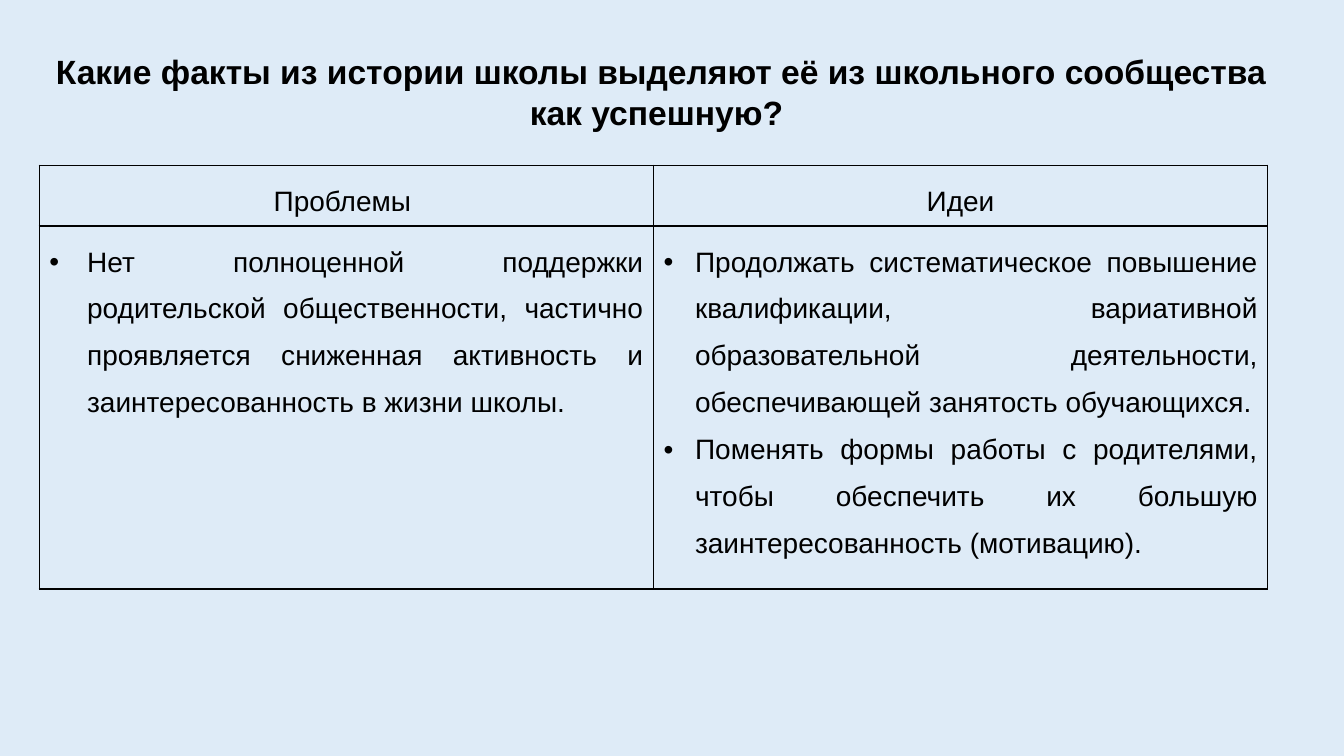
from dataclasses import dataclass

from lxml.etree import SubElement
from pptx import Presentation
from pptx.dml.color import RGBColor
from pptx.enum.text import MSO_AUTO_SIZE, PP_ALIGN
from pptx.oxml.ns import qn
from pptx.util import Pt


@dataclass(frozen=True)
class Theme:
    font: str = "Arial"
    ink: str = "000000"
    background: str = "DEEBF7"
    title_size: int = 24
    body_size: int = 20
    line_spacing: float = 1.5
    border: int = 1


THEME = Theme()

TITLE = "Какие факты из истории школы выделяют её из школьного сообщества как успешную? "
# Each column: heading, bullet indent in points, bullet points
COLUMNS = [
    ("Проблемы ", 27, [
        "Нет полноценной поддержки родительской общественности, частично "
        "проявляется сниженная активность и заинтересованность в жизни школы.",
    ]),
    ("Идеи", 22.5, [
        "Продолжать систематическое повышение квалификации, вариативной "
        "образовательной деятельности, обеспечивающей занятость обучающихся.",
        "Поменять формы работы с родителями, чтобы обеспечить их большую "
        "заинтересованность (мотивацию).",
    ]),
]
LEFT = 28
TABLE_TOP = 118
COLUMN_WIDTH = 438.75
ROW_HEIGHTS = (43.5, 259)


def add_text(paragraph, text, size, align, bold=False):
    paragraph.alignment = align
    run = paragraph.add_run()
    run.text = text
    run.font.name = THEME.font
    run.font.size = Pt(size)
    run.font.bold = bold
    run.font.color.rgb = RGBColor.from_string(THEME.ink)


def add_bullet(paragraph, indent):
    properties = paragraph._p.get_or_add_pPr()
    properties.set("marL", str(Pt(indent)))
    properties.set("indent", str(-Pt(indent)))
    SubElement(properties, qn("a:buFont"), typeface=THEME.font)
    SubElement(properties, qn("a:buChar"), char="•")


def style_cell(cell):
    properties = cell._tc.get_or_add_tcPr()
    for side in ("lnL", "lnR", "lnT", "lnB"):
        line = SubElement(properties, qn(f"a:{side}"), w=str(Pt(THEME.border)))
        fill = SubElement(line, qn("a:solidFill"))
        SubElement(fill, qn("a:srgbClr"), val=THEME.ink)
    cell.fill.background()


def fill_cell(cell, texts, align, indent=None):
    style_cell(cell)
    frame = cell.text_frame
    for index, text in enumerate(texts):
        paragraph = frame.add_paragraph() if index else frame.paragraphs[0]
        if indent is not None:
            add_bullet(paragraph, indent)
        paragraph.line_spacing = THEME.line_spacing
        add_text(paragraph, text, THEME.body_size, align)


def add_title(slide):
    frame = slide.shapes.add_textbox(Pt(LEFT), Pt(33), Pt(888.5), Pt(65.5)).text_frame
    frame.word_wrap = True
    frame.auto_size = MSO_AUTO_SIZE.SHAPE_TO_FIT_TEXT
    add_text(frame.paragraphs[0], TITLE, THEME.title_size, PP_ALIGN.CENTER, bold=True)


def add_comparison(slide):
    table = slide.shapes.add_table(
        len(ROW_HEIGHTS), len(COLUMNS), Pt(LEFT), Pt(TABLE_TOP),
        Pt(COLUMN_WIDTH * len(COLUMNS)), Pt(sum(ROW_HEIGHTS))).table
    table.first_row = table.horz_banding = False
    for row, height in zip(table.rows, ROW_HEIGHTS):
        row.height = Pt(height)
    for index, (heading, indent, points) in enumerate(COLUMNS):
        table.columns[index].width = Pt(COLUMN_WIDTH)
        fill_cell(table.cell(0, index), [heading], PP_ALIGN.CENTER)
        fill_cell(table.cell(1, index), points, PP_ALIGN.JUSTIFY, indent)


def main():
    # Slide and background
    deck = Presentation()
    deck.slide_width, deck.slide_height = Pt(960), Pt(540)
    slide = deck.slides.add_slide(deck.slide_layouts[6])
    slide.background.fill.solid()
    slide.background.fill.fore_color.rgb = RGBColor.from_string(THEME.background)

    # Question and the table of problems and ideas
    add_title(slide)
    add_comparison(slide)
    deck.save("out.pptx")


if __name__ == "__main__":
    main()
